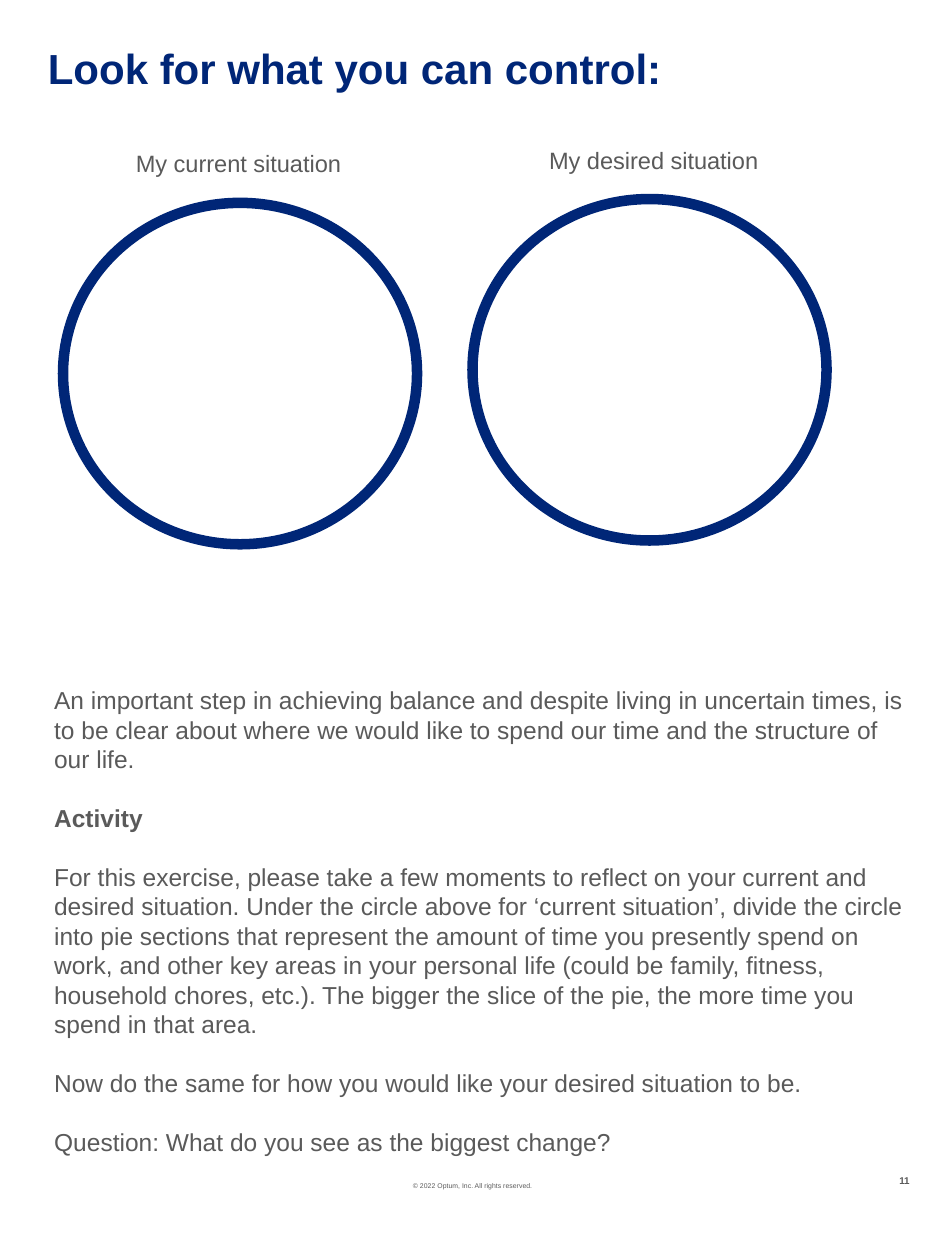
from dataclasses import dataclass

from pptx import Presentation
from pptx.dml.color import RGBColor
from pptx.enum.shapes import MSO_SHAPE as Shape
from pptx.enum.text import PP_ALIGN as Align
from pptx.util import Inches, Pt


@dataclass(frozen=True)
class Theme:
    font: str = "Arial"
    navy: str = "002677"
    gray: str = "5A5A5A"
    white: str = "FFFFFF"
    title: float = 24
    body: float = 14
    leading: float = 16.8
    label: float = 13.5
    number: float = 5.6
    legal: float = 3.9
    ring: float = 6


THEME = Theme()
TITLE = "Look for what you can control:"
LEGAL = "© 2022 Optum, Inc. All rights reserved."
NUMBER = "11"
CIRCLE_SIZE = (2.81, 2.71)
SITUATIONS = [
    {"label": "My current situation", "label_at": (0.98, 1.13, 1.85, 0.33), "circle_at": (0.5, 1.61)},
    {"label": "My desired situation", "label_at": (4.26, 1.11, 1.88, 0.33), "circle_at": (3.75, 1.58)},
]
BODY = [
    ("An important step in achieving balance and despite living in uncertain times, is to be clear "
     "about where we would like to spend our time and the structure of our life.", False),
    ("Activity", True),
    ("For this exercise, please take a few moments to reflect on your current and desired situation. "
     "Under the circle above for ‘current situation’, divide the circle into pie sections that "
     "represent the amount of time you presently spend on work, and other key areas in your personal "
     "life (could be family, fitness, household chores, etc.). The bigger the slice of the pie, the "
     "more time you spend in that area.", False),
    ("Now do the same for how you would like your desired situation to be.", False),
    ("Question: What do you see as the biggest change?", False),
]


def add_text(page, at, items, size, color=THEME.gray, align=Align.LEFT,
             margins=(0, 0), wrap=True, spacing=None, gap=0):
    """Add a text box with one paragraph per (text, bold) item."""
    box = page.shapes.add_textbox(*map(Inches, at))
    frame = box.text_frame
    frame.word_wrap = wrap
    frame.margin_left = frame.margin_right = Inches(margins[0])
    frame.margin_top = frame.margin_bottom = Inches(margins[1])
    for index, (text, bold) in enumerate(items):
        para = frame.add_paragraph() if index else frame.paragraphs[0]
        para.text = text
        para.alignment = align
        para.line_spacing = spacing
        para.space_before = Pt(gap if index else 0)
        para.font.name = THEME.font
        para.font.size = Pt(size)
        para.font.bold = bold
        para.font.color.rgb = RGBColor.from_string(color)


def add_circle(page, at):
    """Add an empty ring to be divided into pie sections."""
    circle = page.shapes.add_shape(Shape.OVAL, *map(Inches, at + CIRCLE_SIZE))
    circle.shadow.inherit = False
    circle.fill.solid()
    circle.fill.fore_color.rgb = RGBColor.from_string(THEME.white)
    circle.line.color.rgb = RGBColor.from_string(THEME.navy)
    circle.line.width = Pt(THEME.ring)


def main():
    """Build the worksheet page and save it."""
    deck = Presentation()
    deck.slide_width, deck.slide_height = Inches(7.5), Inches(10)
    page = deck.slides.add_slide(deck.slide_layouts[6])
    add_text(page, (2.89, 9.38, 1.72, 0.07), [(LEGAL, False)], THEME.legal, align=Align.CENTER)
    add_text(page, (7.12, 9.32, 0.1, 0.09), [(NUMBER, True)], THEME.number,
             align=Align.RIGHT, wrap=False)
    add_text(page, (0.38, 0.38, 5.91, 0.36), [(TITLE, True)], THEME.title, THEME.navy, spacing=0.9)
    for situation in SITUATIONS:
        add_circle(page, situation["circle_at"])
        add_text(page, situation["label_at"], [(situation["label"], False)], THEME.label,
                 margins=(0.1, 0.05), wrap=False)
    add_text(page, (0.43, 5.44, 6.83, 4.09), BODY, THEME.body,
             spacing=Pt(THEME.leading), gap=THEME.leading)
    deck.save("out.pptx")


if __name__ == "__main__":
    main()
